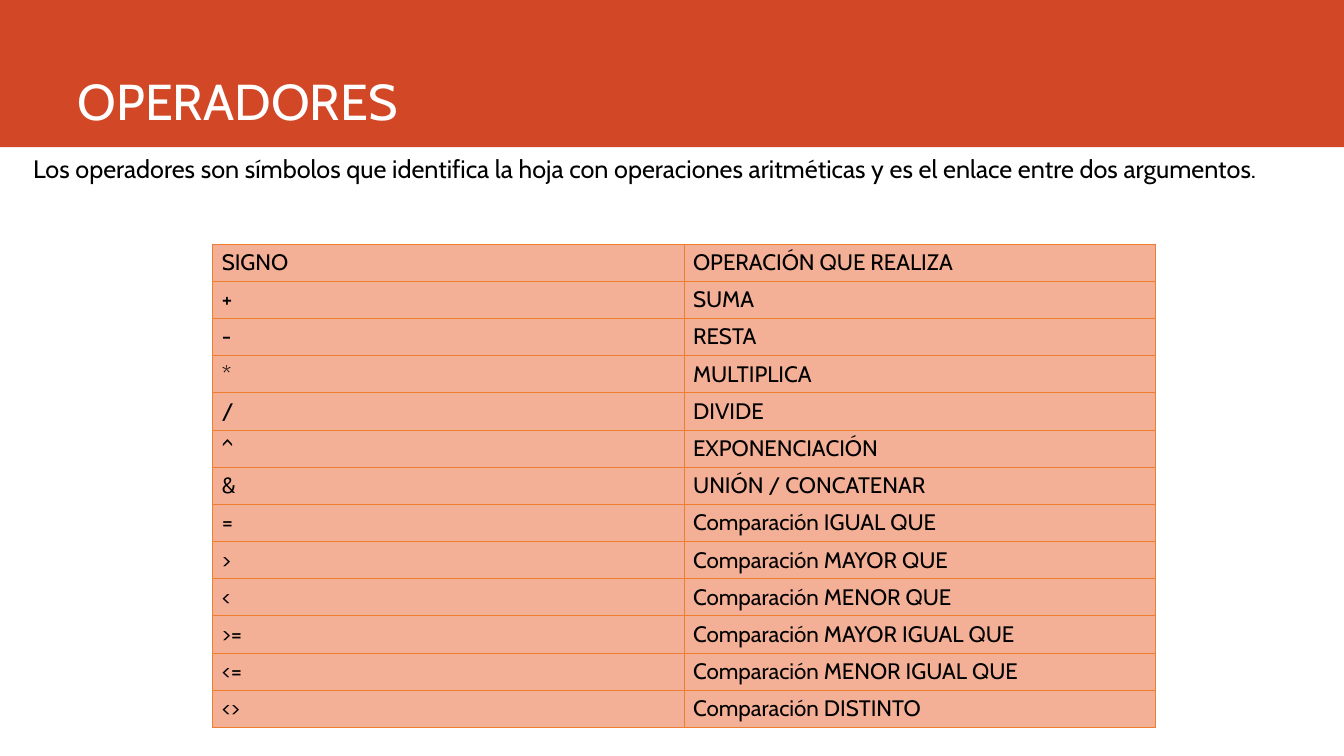
from pptx import Presentation
from pptx.dml.color import RGBColor
from pptx.enum.shapes import MSO_SHAPE as Shape
from pptx.enum.text import MSO_ANCHOR as Anchor, PP_ALIGN as Align
from pptx.oxml import parse_xml
from pptx.oxml.ns import nsdecls
from pptx.util import Inches, Pt

FONT = "Cabin"
BLACK, WHITE, RED = "000000", "FFFFFF", "D24726"
SALMON, ORANGE = "F4B096", "ED7D31"
INTRO = ("Los operadores son símbolos que identifica la hoja con operaciones "
         "aritméticas y es el enlace entre dos argumentos.")
OPERATORS = [
    ("SIGNO", "OPERACIÓN QUE REALIZA"),
    ("+", "SUMA"),
    ("-", "RESTA"),
    ("*", "MULTIPLICA"),
    ("/", "DIVIDE"),
    ("^", "EXPONENCIACIÓN"),
    ("&", "UNIÓN / CONCATENAR"),
    ("=", "Comparación IGUAL QUE"),
    (">", "Comparación MAYOR QUE"),
    ("<", "Comparación MENOR QUE"),
    (">=", "Comparación MAYOR IGUAL QUE"),
    ("<=", "Comparación MENOR IGUAL QUE"),
    ("<>", "Comparación DISTINTO"),
]


def color(value):
    """Return the colour for a hex string."""
    return RGBColor.from_string(value)


def write(frame, text, size, ink, align=Align.LEFT):
    """Fill a text frame with one styled paragraph."""
    para = frame.paragraphs[0]
    para.text = text
    para.alignment = align
    para.font.name = FONT
    para.font.size = Pt(size)
    para.font.color.rgb = color(ink)


def add_band(page, left, top, width, height, fill):
    """Add a plain filled rectangle."""
    band = page.shapes.add_shape(Shape.RECTANGLE, Inches(left), Inches(top),
                                 Inches(width), Inches(height))
    band.shadow.inherit = False
    band.fill.solid()
    band.fill.fore_color.rgb = color(fill)
    band.line.fill.background()


def add_text(page, left, top, width, height, text, size, ink,
             align=Align.LEFT, anchor=Anchor.TOP):
    """Add a wrapping text box."""
    box = page.shapes.add_textbox(Inches(left), Inches(top),
                                  Inches(width), Inches(height))
    box.text_frame.word_wrap = True
    box.text_frame.vertical_anchor = anchor
    write(box.text_frame, text, size, ink, align)


def set_borders(cell, line, points):
    """Draw the four borders of a table cell."""
    properties = cell._tc.get_or_add_tcPr()
    for index, side in enumerate(("lnL", "lnR", "lnT", "lnB")):
        border = parse_xml(
            f'<a:{side} {nsdecls("a")} w="{Pt(points)}"><a:solidFill>'
            f'<a:srgbClr val="{line}"/></a:solidFill></a:{side}>')
        properties.insert(index, border)


def add_grid(page, left, top, width, row_height, rows):
    """Add a table with uniform cells."""
    frame = page.shapes.add_table(
        len(rows), len(rows[0]), Inches(left), Inches(top),
        Inches(width), Inches(row_height * len(rows)))
    table = frame.table
    table.first_row = table.horz_banding = False
    for row, texts in zip(table.rows, rows):
        row.height = Inches(row_height)
        for cell, text in zip(row.cells, texts):
            cell.fill.solid()
            cell.fill.fore_color.rgb = color(SALMON)
            cell.vertical_anchor = Anchor.MIDDLE
            cell.margin_left = cell.margin_right = Inches(0.09)
            cell.margin_top = cell.margin_bottom = Inches(0.05)
            write(cell.text_frame, text, 16, BLACK)
            set_borders(cell, ORANGE, 0.5)


def main():
    """Build the slide on operators."""
    deck = Presentation()
    deck.slide_width, deck.slide_height = Inches(13.33), Inches(7.5)
    page = deck.slides.add_slide(deck.slide_layouts[6])
    add_band(page, 0, 0, 13.33, 1.46, RED)
    add_grid(page, 2.11, 2.42, 9.35, 0.36, OPERATORS)
    add_text(page, 0.23, 1.47, 12.48, 0.71, INTRO, 18, BLACK, Align.JUSTIFY)
    add_text(page, 0.67, 0, 11.75, 1.34, "OPERADORES", 36, WHITE,
             anchor=Anchor.BOTTOM)
    deck.save("out.pptx")


if __name__ == "__main__":
    main()
